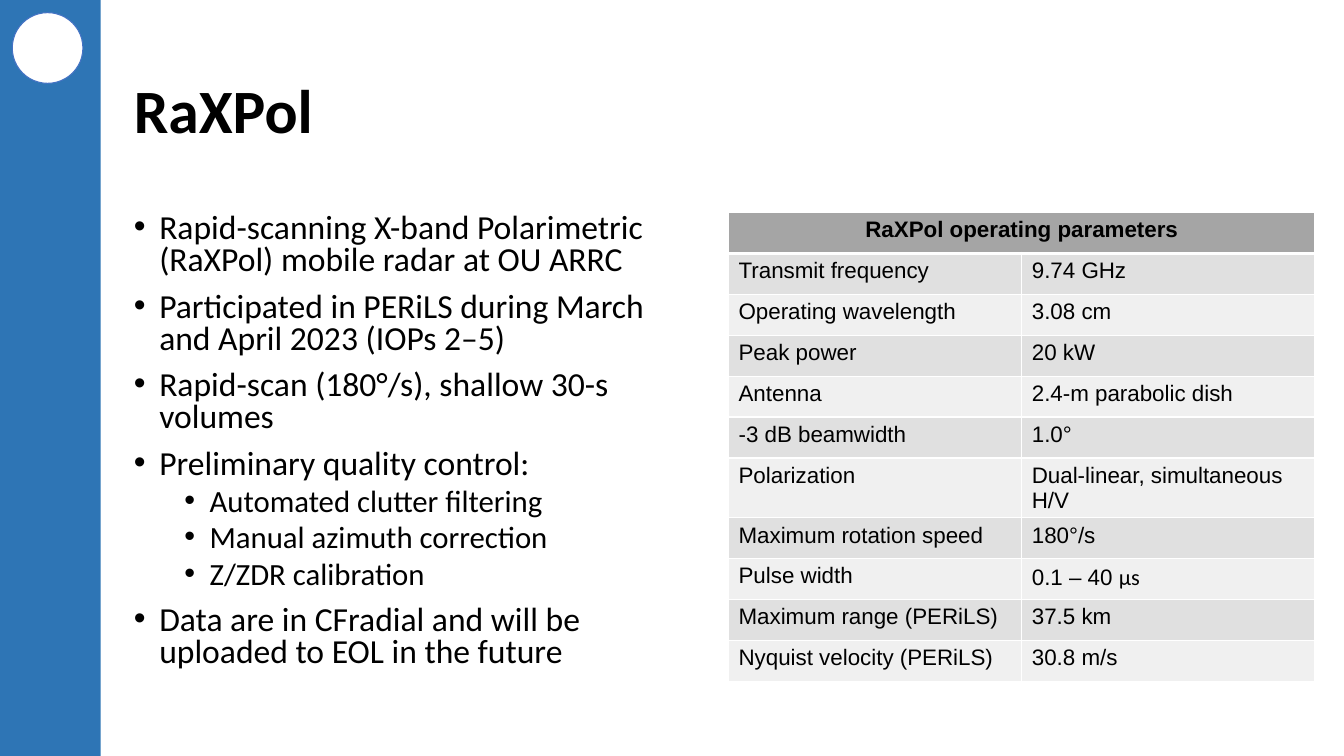
import dataclasses

import lxml.etree
import pptx
import pptx.dml.color
import pptx.enum.shapes
import pptx.enum.text
import pptx.oxml.ns
import pptx.util
from pptx.util import Cm, Pt

BLACK = "000000"
WHITE = "FFFFFF"
HEADER_GREY = "A5A5A5"
BAND_GREYS = ("E0E0E0", "F0F0F0")


@dataclasses.dataclass
class TextRun:
    text: str
    size: float
    font: str = "Calibri"
    bold: bool = False


@dataclasses.dataclass
class Bullet:
    text: str
    level: int = 0


@dataclasses.dataclass
class Decoration:
    kind: pptx.enum.shapes.MSO_SHAPE
    left: float
    top: float
    width: float
    height: float
    fill: str
    line: str | None = None


@dataclasses.dataclass
class Parameter:
    name: str
    value: str
    unit: str = ""  # set in Calibri after the value


DECORATIONS = [
    Decoration(pptx.enum.shapes.MSO_SHAPE.RECTANGLE, 0, 0, 2.54, 19.05, "2E75B5"),
    Decoration(pptx.enum.shapes.MSO_SHAPE.OVAL, 0.31, 0.32, 1.78, 1.78, WHITE, "4472C4"),
]

BULLETS = [
    Bullet("Rapid-scanning X-band Polarimetric (RaXPol) mobile radar at OU ARRC"),
    Bullet("Participated in PERiLS during March and April 2023 (IOPs 2–5)"),
    Bullet("Rapid-scan (180°/s), shallow 30-s volumes"),
    Bullet("Preliminary quality control:"),
    Bullet("Automated clutter filtering", 1),
    Bullet("Manual azimuth correction", 1),
    Bullet("Z/ZDR calibration", 1),
    Bullet("Data are in CFradial and will be uploaded to EOL in the future"),
]

PARAMETERS = [
    Parameter("Transmit frequency", "9.74 GHz"),
    Parameter("Operating wavelength", "3.08 cm"),
    Parameter("Peak power", "20 kW"),
    Parameter("Antenna", "2.4-m parabolic dish"),
    Parameter("-3 dB beamwidth", "1.0°"),
    Parameter("Polarization", "Dual-linear, simultaneous H/V"),
    Parameter("Maximum rotation speed", "180°/s"),
    Parameter("Pulse width", "0.1 – 40 ", "μs"),
    Parameter("Maximum range (PERiLS)", "37.5 km"),
    Parameter("Nyquist velocity (PERiLS)", "30.8 m/s"),
]


def color(hex_value: str) -> pptx.dml.color.RGBColor:
    return pptx.dml.color.RGBColor.from_string(hex_value)


def add_element(parent, tag: str, **attributes: str):
    return lxml.etree.SubElement(parent, pptx.oxml.ns.qn(tag), attributes)


def add_run(paragraph, text_run: TextRun) -> None:
    run = paragraph.add_run()
    run.text = text_run.text
    run.font.name = text_run.font
    run.font.size = Pt(text_run.size)
    run.font.bold = text_run.bold
    run.font.color.rgb = color(BLACK)


def place(shape, left: float, top: float, width: float, height: float) -> None:
    shape.left, shape.top = Cm(left), Cm(top)
    shape.width, shape.height = Cm(width), Cm(height)


def add_decoration(slide, item: Decoration) -> None:
    shape = slide.shapes.add_shape(
        item.kind, Cm(item.left), Cm(item.top), Cm(item.width), Cm(item.height)
    )
    shape.shadow.inherit = False
    shape.fill.solid()
    shape.fill.fore_color.rgb = color(item.fill)
    if item.line is None:
        shape.line.fill.background()
    else:
        shape.line.color.rgb = color(item.line)
        shape.line.width = Pt(0.75)


def fill_title(title, text: str) -> None:
    place(title, 3.12, 1.02, 28.42, 3.68)
    frame = title.text_frame
    frame.auto_size = pptx.enum.text.MSO_AUTO_SIZE.NONE
    frame.vertical_anchor = pptx.enum.text.MSO_ANCHOR.MIDDLE
    paragraph = frame.paragraphs[0]
    paragraph.alignment = pptx.enum.text.PP_ALIGN.LEFT
    paragraph.line_spacing = 0.9
    add_run(paragraph, TextRun(text, 44, bold=True))


def fill_body(body, bullets: list[Bullet]) -> None:
    place(body, 3.12, 5.26, 14.07, 12.83)
    frame = body.text_frame
    frame.word_wrap = True
    frame.auto_size = pptx.enum.text.MSO_AUTO_SIZE.NONE
    frame.vertical_anchor = pptx.enum.text.MSO_ANCHOR.TOP
    for index, bullet in enumerate(bullets):
        paragraph = frame.add_paragraph() if index else frame.paragraphs[0]
        paragraph.level = bullet.level
        properties = paragraph._p.get_or_add_pPr()
        properties.set("marL", str(Cm(0.64 + 1.27 * bullet.level)))
        properties.set("indent", str(Cm(-0.64)))
        bullet_color = add_element(properties, "a:buClr")
        add_element(bullet_color, "a:srgbClr", val=BLACK)
        add_element(properties, "a:buFont", typeface="Arial")
        add_element(properties, "a:buChar", char="•")
        paragraph.line_spacing = 0.8
        paragraph.space_before = Pt((5 if bullet.level else 10) if index else 0)
        paragraph.space_after = Pt(0)
        add_run(paragraph, TextRun(bullet.text, 22 if bullet.level else 24))


def format_cell(cell, fill: str, top: float, bottom: float) -> None:
    properties = cell._tc.get_or_add_tcPr()
    for side, width in (("L", 1), ("R", 1), ("T", top), ("B", bottom)):
        line = add_element(properties, f"a:ln{side}", w=str(Pt(width)))
        add_element(add_element(line, "a:solidFill"), "a:srgbClr", val=WHITE)
    cell.fill.solid()
    cell.fill.fore_color.rgb = color(fill)


def add_parameter_table(slide, heading: str, parameters: list[Parameter]) -> None:
    row_count = len(parameters) + 1
    row_height = 1.03
    table = slide.shapes.add_table(
        row_count, 2, Cm(18.36), Cm(5.36), Cm(14.78), Cm(row_height * row_count)
    ).table
    table.first_row = table.horz_banding = False

    # Heading across both columns
    for cell in table.rows[0].cells:
        format_cell(cell, HEADER_GREY, 1, 3)
    heading_cell = table.cell(0, 0)
    heading_cell.merge(table.cell(0, 1))
    paragraph = heading_cell.text_frame.paragraphs[0]
    paragraph.alignment = pptx.enum.text.PP_ALIGN.CENTER
    add_run(paragraph, TextRun(heading, 16, "Arial", True))

    # Banded parameter rows
    for row, parameter in enumerate(parameters, start=1):
        for column, text in enumerate((parameter.name, parameter.value)):
            cell = table.cell(row, column)
            format_cell(cell, BAND_GREYS[(row - 1) % 2], 3 if row == 1 else 1, 1)
            add_run(cell.text_frame.paragraphs[0], TextRun(text, 16, "Arial"))
        if parameter.unit:
            add_run(table.cell(row, 1).text_frame.paragraphs[0], TextRun(parameter.unit, 16))


def main() -> None:
    presentation = pptx.Presentation()
    presentation.slide_width, presentation.slide_height = Cm(33.87), Cm(19.05)
    slide = presentation.slides.add_slide(presentation.slide_layouts[1])
    for decoration in DECORATIONS:
        add_decoration(slide, decoration)
    fill_title(slide.shapes.title, "RaXPol")
    add_parameter_table(slide, "RaXPol operating parameters", PARAMETERS)
    fill_body(slide.placeholders[1], BULLETS)
    presentation.save("out.pptx")


if __name__ == "__main__":
    main()
